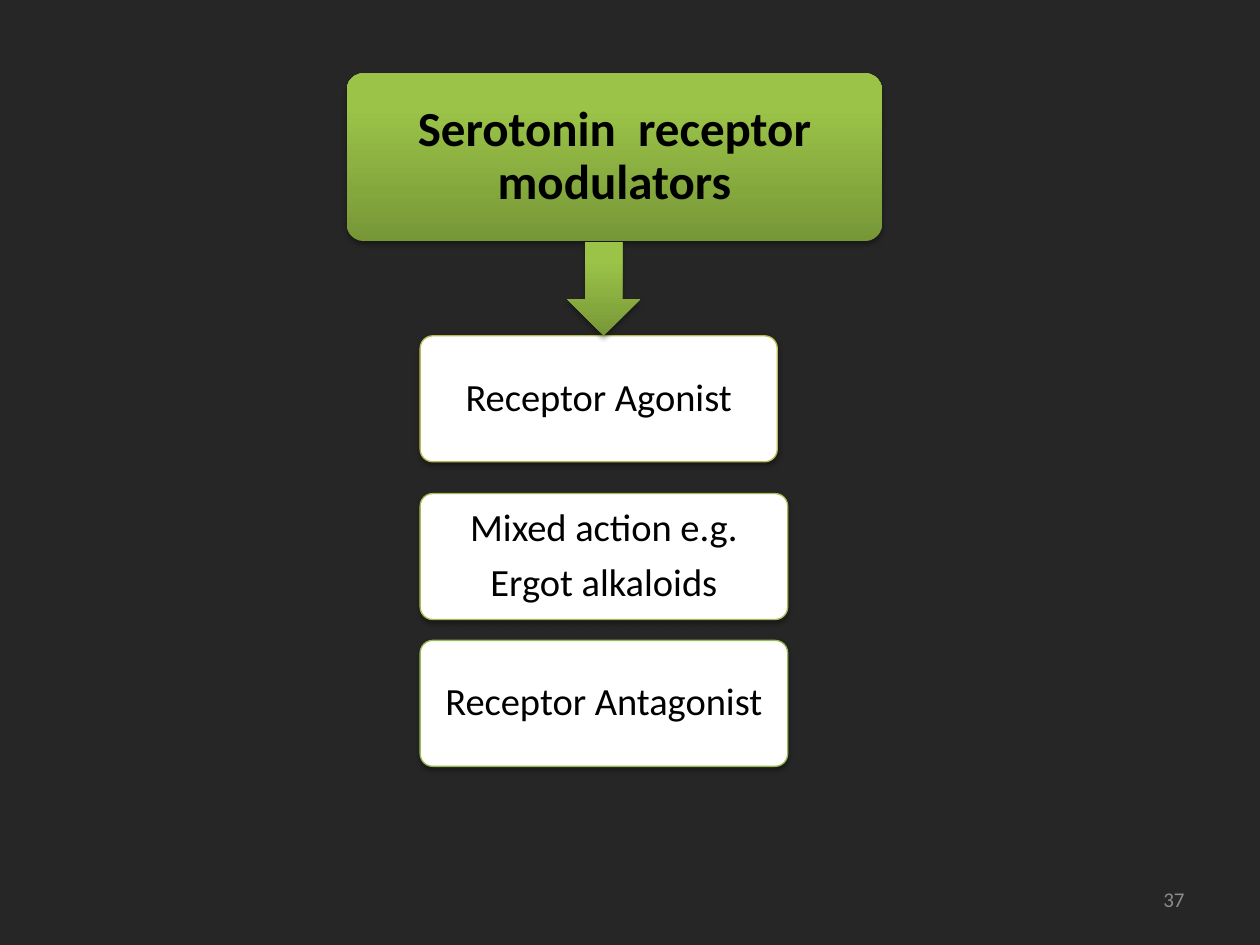
from lxml import etree
from pptx import Presentation
from pptx import util as u
from pptx.dml.color import RGBColor
from pptx.enum import shapes, text
from pptx.oxml.ns import qn

BACKGROUND = RGBColor(0x26, 0x26, 0x26)
GREEN_DARK = RGBColor(0x77, 0x97, 0x37)
GREEN = RGBColor(0x9B, 0xC3, 0x48)
WHITE = RGBColor(0xFF, 0xFF, 0xFF)
BLACK = RGBColor(0, 0, 0)
GREY = RGBColor(0x8C, 0x8C, 0x8C)
EDGES = [RGBColor(0xBA, 0xBA, 0x52), RGBColor(0xA9, 0xBA, 0x54), RGBColor(0x98, 0xB9, 0x55)]


def add_box(kind, left, top, width, height, edge=None):
    sp = s.shapes.add_shape(kind, u.Cm(left), u.Cm(top), u.Cm(width), u.Cm(height))
    if kind == shapes.MSO_SHAPE.ROUNDED_RECTANGLE:
        sp.adjustments[0] = 0.1
    if edge is None:
        sp.fill.gradient()
        sp.fill.gradient_angle = 90
        for stop, (pos, color) in zip(sp.fill.gradient_stops, [(0, GREEN_DARK), (0.8, GREEN)]):
            stop.position = pos
            stop.color.rgb = color
        sp.line.fill.background()
    else:
        sp.fill.solid()
        sp.fill.fore_color.rgb = WHITE
        sp.line.color.rgb = edge
        sp.line.width = u.Pt(0.75)
    sp.shadow.inherit = False
    effects = sp._element.spPr.find(qn("a:effectLst"))
    shadow = etree.SubElement(effects, qn("a:outerShdw"), blurRad=str(u.Pt(3.1)),
                              dist=str(u.Pt(1.8)), dir="5400000", rotWithShape="0")
    color = etree.SubElement(shadow, qn("a:srgbClr"), val="000000")
    etree.SubElement(color, qn("a:alpha"), val="35000")
    return sp


def write(sp, content, size, color, align, bold=False, inset=0.13):
    tf = sp.text_frame
    tf.text = content
    tf.word_wrap = True
    tf.auto_size = text.MSO_AUTO_SIZE.NONE
    tf.vertical_anchor = text.MSO_ANCHOR.MIDDLE
    tf.margin_left = tf.margin_right = u.Cm(inset)
    tf.margin_top = tf.margin_bottom = u.Cm(0.08)
    for p in tf.paragraphs:
        p.alignment = align
        p.line_spacing = 0.9
        p.space_after = u.Pt(size * 0.35)
        for r in p.runs:
            r.font.name = "Calibri"
            r.font.size = u.Pt(size)
            r.font.bold = bold
            r.font.color.rgb = color


prs = Presentation()
prs.slide_width, prs.slide_height = u.Cm(25.4), u.Cm(19.05)
s = prs.slides.add_slide(prs.slide_layouts[5])
s.background.fill.solid()
s.background.fill.fore_color.rgb = BACKGROUND

add_box(shapes.MSO_SHAPE.ROUNDED_RECTANGLE, 6.99, 1.48, 10.79, 3.38)
title = s.shapes.title
title.left, title.top, title.width, title.height = u.Cm(7.14), u.Cm(1.57), u.Cm(10.49), u.Cm(3.2)
write(title, "Serotonin  receptor modulators", 28, BLACK, text.PP_ALIGN.CENTER, bold=True)
s.shapes._spTree.append(title._element)

boxes = [
    ("Receptor Agonist", 6.77, 7.2),
    ("Mixed action e.g.\nErgot alkaloids", 9.95, 7.41),
    ("Receptor Antagonist", 12.91, 7.41),
]
for (content, top, width), edge in zip(boxes, EDGES):
    sp = add_box(shapes.MSO_SHAPE.ROUNDED_RECTANGLE, 8.47, top, width, 2.54, edge)
    write(sp, content, 22, BLACK, text.PP_ALIGN.CENTER)

add_box(shapes.MSO_SHAPE.DOWN_ARROW, 11.43, 4.87, 1.48, 1.9)

number = s.shapes.add_textbox(u.Cm(18.2), u.Cm(17.66), u.Cm(5.93), u.Cm(1.01))
write(number, "37", 12, GREY, text.PP_ALIGN.RIGHT, inset=0.25)

prs.save("out.pptx")
